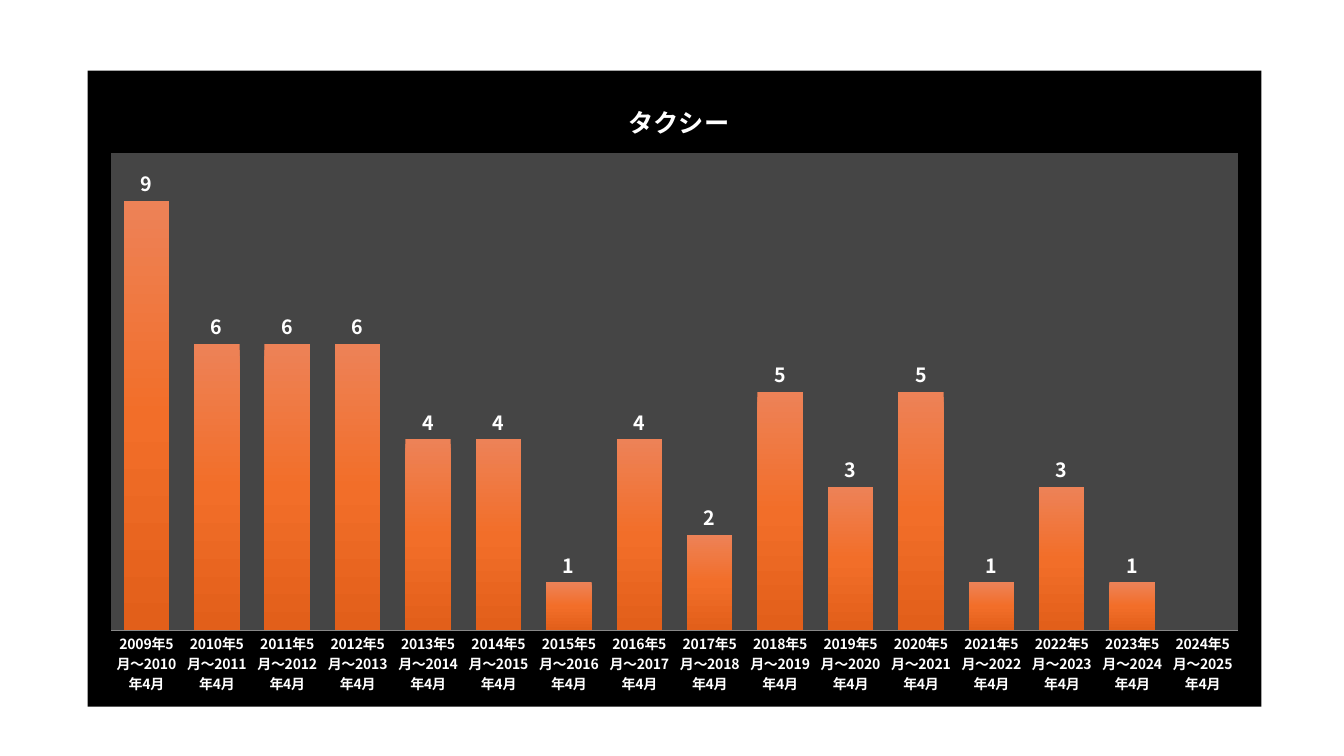
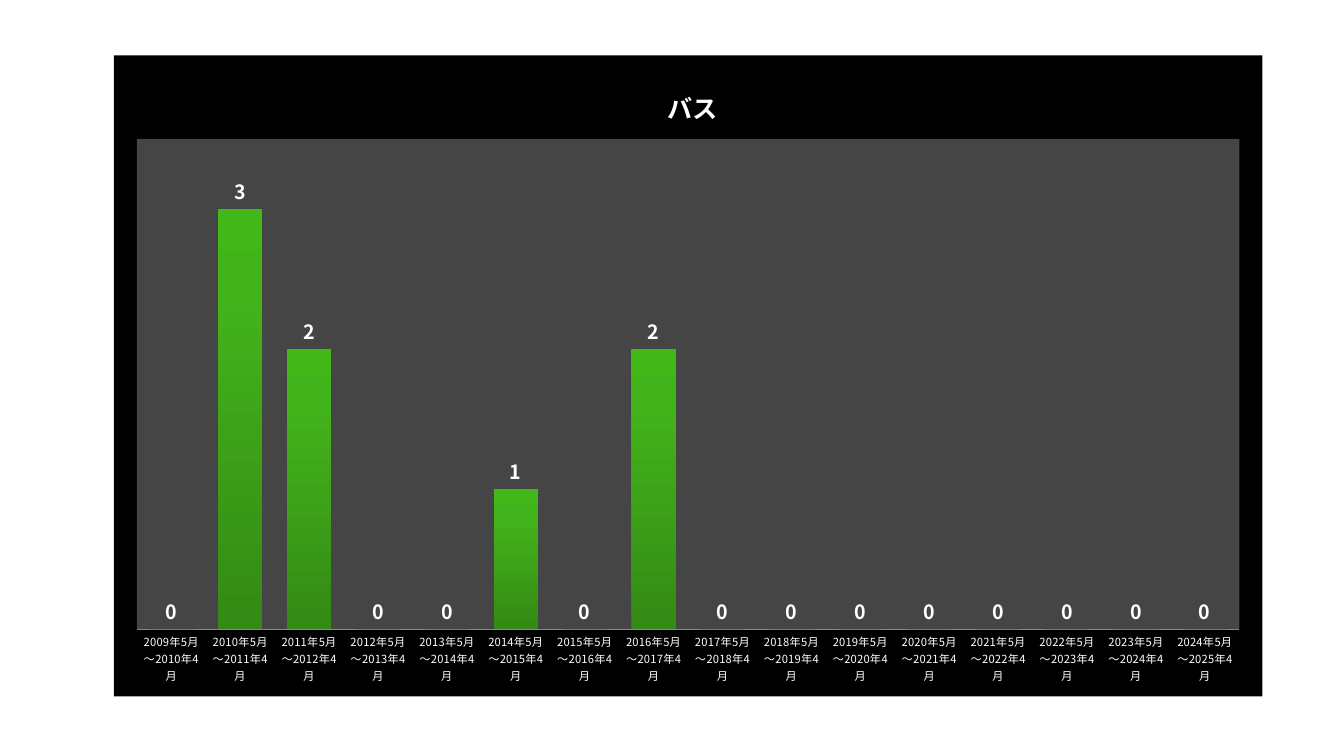
from copy import deepcopy
from dataclasses import dataclass
from typing import Optional

from lxml import etree
from pptx import Presentation
from pptx.chart.chart import Chart
from pptx.chart.data import CategoryChartData
from pptx.dml.color import RGBColor
from pptx.enum.chart import XL_CHART_TYPE, XL_LABEL_POSITION, XL_TICK_MARK
from pptx.oxml import parse_xml
from pptx.oxml.ns import nsdecls, qn
from pptx.slide import Slide
from pptx.text.text import Font
from pptx.util import Inches, Pt

COLUMNS = XL_CHART_TYPE.COLUMN_CLUSTERED
ABOVE_BAR = XL_LABEL_POSITION.OUTSIDE_END
NO_TICK = XL_TICK_MARK.NONE
BLANK_LAYOUT = 6


@dataclass(frozen=True)
class Theme:
    font: str = "Noto Sans CJK JP"
    text: str = "FFFFFF"
    background: str = "000000"
    plot: str = "454545"
    axis: str = "888888"
    title_size: int = 18
    value_size: int = 14
    base_size: int = 10
    axis_width: float = 0.75
    gap_width: int = 55


@dataclass(frozen=True)
class GradientStop:
    position: float
    color: str


@dataclass(frozen=True)
class VehicleChart:
    title: str
    left: float
    top: float
    width: float
    height: float
    counts: tuple[Optional[int], ...]
    axis_max: float
    plot_height: float
    period_size: int
    period_bold: bool
    gradient: tuple[GradientStop, ...]
    gradient_angle: int  # counter-clockwise


THEME = Theme()
PERIODS = [f"{year}年5月～{year + 1}年4月" for year in range(2009, 2025)]
PLOT_LEFT, PLOT_TOP, PLOT_WIDTH = 0.02, 0.13, 0.96
TITLE_TOP = 0.04

VEHICLE_CHARTS = (
    VehicleChart(
        "タクシー", 0.87, 0.7, 11.64, 6.31,
        (9, 6, 6, 6, 4, 4, 1, 4, 2, 5, 3, 5, 1, 3, 1, None),
        axis_max=10, plot_height=0.75, period_size=10, period_bold=True,
        gradient=(GradientStop(0, "ED8257"), GradientStop(0.5, "F26E29"),
                  GradientStop(1, "E25F1A")),
        gradient_angle=270,
    ),
    VehicleChart(
        "バス", 1.13, 0.55, 11.39, 6.36,
        (0, 3, 2, 0, 0, 1, 0, 2, 0, 0, 0, 0, 0, 0, 0, 0),
        axis_max=3.5, plot_height=0.765, period_size=8, period_bold=False,
        gradient=(GradientStop(0, "348A15"), GradientStop(0.8, "43B31B"),
                  GradientStop(1, "42B718")),
        gradient_angle=90,
    ),
)


def style_font(font: Font, size: int, bold: bool, color: str = THEME.text) -> None:
    font.name = THEME.font
    font.size = Pt(size)
    font.bold = bold
    font.color.rgb = RGBColor.from_string(color)


def manual_layout(x: float, y: float, size: Optional[tuple[float, float]] = None) -> etree._Element:
    """Layout in fractions of the chart; a size makes it the inner plot area."""
    fields = [("xMode", "edge"), ("yMode", "edge"), ("x", x), ("y", y)]
    if size:
        fields = [("layoutTarget", "inner"), *fields, ("w", size[0]), ("h", size[1])]
    body = "".join(f'<c:{tag} val="{value}"/>' for tag, value in fields)
    return parse_xml(f'<c:layout {nsdecls("c")}><c:manualLayout>{body}</c:manualLayout></c:layout>')


def place(part: etree._Element, layout: etree._Element, index: int) -> None:
    for old in part.findall(qn("c:layout")):
        part.remove(old)
    part.insert(index, layout)


def solid_area(color: str) -> etree._Element:
    return parse_xml(
        f'<c:spPr {nsdecls("c", "a")}><a:solidFill><a:srgbClr val="{color}"/></a:solidFill>'
        "<a:ln><a:noFill/></a:ln></c:spPr>"
    )


def add_title(chart: Chart, vehicle: VehicleChart) -> None:
    chart.has_title = True
    paragraph = chart.chart_title.text_frame.paragraphs[0]
    paragraph.text = vehicle.title
    style_font(paragraph.runs[0].font, THEME.title_size, True)
    text_width = len(vehicle.title) * THEME.title_size / 72
    title_left = round(0.5 - text_width / vehicle.width / 2, 3)
    place(chart.element.find(".//" + qn("c:title")), manual_layout(title_left, TITLE_TOP), 1)


def style_axes(chart: Chart, vehicle: VehicleChart) -> None:
    counts = chart.value_axis
    counts.minimum_scale, counts.maximum_scale = 0, vehicle.axis_max
    counts.has_major_gridlines = False
    counts.visible = False

    periods = chart.category_axis
    periods.major_tick_mark = periods.minor_tick_mark = NO_TICK
    periods.format.line.color.rgb = RGBColor.from_string(THEME.axis)
    periods.format.line.width = Pt(THEME.axis_width)
    style_font(periods.tick_labels.font, vehicle.period_size, vehicle.period_bold)
    chart.element.find(f".//{qn('c:catAx')}/{qn('c:txPr')}/{qn('a:bodyPr')}").set("rot", "0")


def style_bars(chart: Chart, vehicle: VehicleChart) -> None:
    plot = chart.plots[0]
    plot.gap_width = THEME.gap_width
    plot.vary_by_categories = False
    plot.has_data_labels = True
    labels = plot.data_labels
    labels.show_value = True
    labels.position = ABOVE_BAR
    style_font(labels.font, THEME.value_size, True)

    fill = plot.series[0].format.fill
    fill.gradient()
    fill.gradient_angle = vehicle.gradient_angle
    stop_list = chart.element.find(".//" + qn("a:gsLst"))
    while len(stop_list) < len(vehicle.gradient):
        stop_list.append(deepcopy(stop_list[0]))
    for stop, wanted in zip(fill.gradient_stops, vehicle.gradient):
        stop.position = wanted.position
        stop.color.rgb = RGBColor.from_string(wanted.color)


def add_vehicle_chart(slide: Slide, vehicle: VehicleChart) -> None:
    data = CategoryChartData()
    data.categories = PERIODS
    data.add_series("Series 1", vehicle.counts)
    chart = slide.shapes.add_chart(
        COLUMNS, Inches(vehicle.left), Inches(vehicle.top),
        Inches(vehicle.width), Inches(vehicle.height), data,
    ).chart
    chart.has_legend = False
    style_font(chart.font, THEME.base_size, False, THEME.background)
    add_title(chart, vehicle)
    style_axes(chart, vehicle)
    style_bars(chart, vehicle)

    plot_area = chart.element.find(".//" + qn("c:plotArea"))
    place(plot_area, manual_layout(PLOT_LEFT, PLOT_TOP, (PLOT_WIDTH, vehicle.plot_height)), 0)
    plot_area.append(solid_area(THEME.plot))
    chart.element.find(qn("c:chart")).addnext(solid_area(THEME.background))
    for latin in list(chart.element.iter(qn("a:latin"))):
        latin.addnext(parse_xml(f'<a:ea {nsdecls("a")} typeface="{THEME.font}"/>'))


def main() -> None:
    deck = Presentation()
    deck.slide_width, deck.slide_height = Inches(13.33), Inches(7.5)
    for vehicle in VEHICLE_CHARTS:
        add_vehicle_chart(deck.slides.add_slide(deck.slide_layouts[BLANK_LAYOUT]), vehicle)
    deck.save("out.pptx")


if __name__ == "__main__":
    main()
